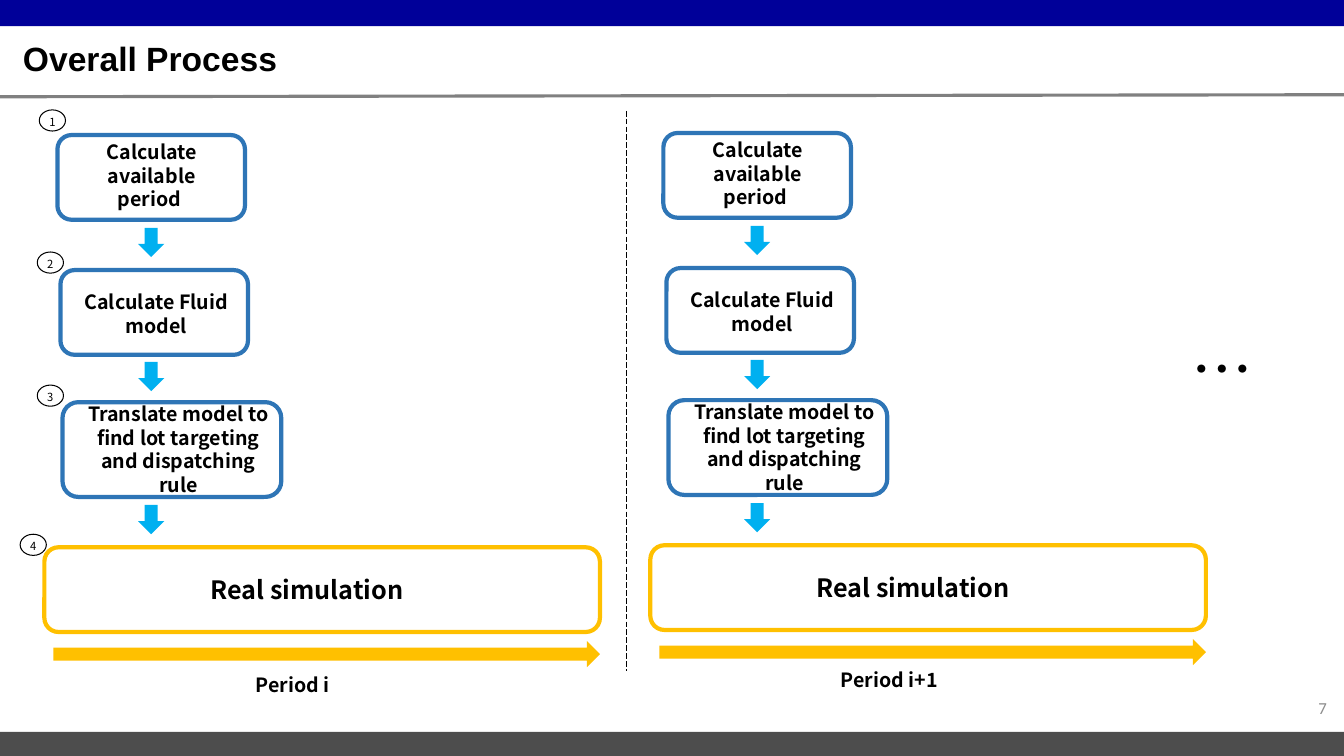
"""Build the Overall Process slide: two simulation periods side by side."""
from typing import NamedTuple

from lxml.etree import SubElement
from pptx import Presentation
from pptx.dml.color import RGBColor
from pptx.enum.dml import MSO_LINE
from pptx.enum.shapes import MSO_CONNECTOR, MSO_SHAPE as Preset
from pptx.enum.text import MSO_ANCHOR as Anchor, PP_ALIGN as Align
from pptx.oxml.ns import qn
from pptx.util import Inches, Pt

BODY_FONT = "Noto Sans CJK KR"
BLACK, BLUE, SKY, GOLD = "000000", "2E75B6", "00B0F0", "FFC000"


class Box(NamedTuple):
    left: float
    top: float
    width: float
    height: float

    def shifted(self, dx: float, dy: float) -> "Box":
        return Box(self.left + dx, self.top + dy, self.width, self.height)

    def lengths(self) -> list:
        return [Inches(value) for value in self]


class Step(NamedTuple):
    label: str
    frame: Box
    label_box: Box
    color: str = BLUE
    size: float = 14
    align: Align = Align.CENTER


class Period(NamedTuple):
    label: str
    label_box: Box
    dx: float
    dy: float


class Marker(NamedTuple):
    number: str
    left: float
    top: float


STEPS = [
    Step("Calculate available period ", Box(0.57, 1.34, 1.86, 0.84), Box(0.7, 1.34, 1.61, 0.81)),
    Step("Calculate Fluid model", Box(0.6, 2.68, 1.86, 0.84), Box(0.53, 2.83, 2.04, 0.57)),
    Step("Translate model to find lot targeting and dispatching rule",
         Box(0.62, 3.99, 2.17, 0.94), Box(0.75, 3.94, 2.04, 1.04)),
    Step("Real simulation", Box(0.44, 5.43, 5.51, 0.84), Box(1.99, 5.65, 3.38, 0.4),
         GOLD, 18, Align.LEFT),
]
STEP_ARROWS = [Box(1.37, top, 0.26, 0.29) for top in (2.26, 3.59, 5.01)]
TIME_ARROW = Box(0.53, 6.36, 5.42, 0.26)
PERIODS = [
    Period("Period i", Box(2.44, 6.63, 2.04, 0.34), 0, 0),
    Period("Period i+1", Box(8.24, 6.58, 2.04, 0.34), 6.01, -0.02),
]
MARKERS = [Marker("1", 0.39, 1.09), Marker("2", 0.37, 2.5),
           Marker("3", 0.37, 3.82), Marker("4", 0.2, 5.3)]


def rgb(color: str) -> RGBColor:
    """Turn a hex string into a colour."""
    return RGBColor.from_string(color)


def add_filled(slide, preset: Preset, box: Box, color: str) -> None:
    """Draw a solid shape without an outline."""
    shape = slide.shapes.add_shape(preset, *box.lengths())
    shape.shadow.inherit = False
    shape.fill.solid()
    shape.fill.fore_color.rgb = rgb(color)
    shape.line.fill.background()


def add_outline(slide, preset: Preset, box: Box, color: str, weight: float) -> None:
    """Draw an unfilled shape with an outline."""
    shape = slide.shapes.add_shape(preset, *box.lengths())
    shape.shadow.inherit = False
    shape.fill.background()
    shape.line.color.rgb = rgb(color)
    shape.line.width = Pt(weight)


def add_label(slide, text: str, box: Box, size: float, bold: bool = False,
              align: Align = Align.LEFT, font: str = BODY_FONT, color: str = BLACK,
              anchor: Anchor = Anchor.TOP, spacing: float = 1.0) -> None:
    """Write one wrapped paragraph of text."""
    frame = slide.shapes.add_textbox(*box.lengths()).text_frame
    frame.word_wrap = True
    frame.vertical_anchor = anchor
    frame.text = text
    paragraph = frame.paragraphs[0]
    paragraph.alignment = align
    paragraph.line_spacing = spacing
    run_font = paragraph.runs[0].font
    run_font.name, run_font.size, run_font.bold = font, Pt(size), bold
    run_font.color.rgb = rgb(color)
    SubElement(paragraph.runs[0]._r.get_or_add_rPr(), qn("a:ea"), typeface=font)


def add_rule(slide, start: tuple[float, float], end: tuple[float, float],
             color: str, weight: float, dash: MSO_LINE = MSO_LINE.SOLID) -> None:
    """Draw a straight line."""
    ends = [Inches(value) for value in (*start, *end)]
    rule = slide.shapes.add_connector(MSO_CONNECTOR.STRAIGHT, *ends)
    rule.line.color.rgb = rgb(color)
    rule.line.width = Pt(weight)
    rule.line.dash_style = dash
    SubElement(rule._element.spPr, qn("a:effectLst"))


def add_period(slide, period: Period) -> None:
    """Draw the steps, arrows and label of one period."""
    shift = period.dx, period.dy
    for step in STEPS:
        add_outline(slide, Preset.ROUNDED_RECTANGLE, step.frame.shifted(*shift), step.color, 3)
        add_label(slide, step.label, step.label_box.shifted(*shift), step.size, True, step.align)
    for arrow in STEP_ARROWS:
        add_filled(slide, Preset.DOWN_ARROW, arrow.shifted(*shift), SKY)
    add_filled(slide, Preset.RIGHT_ARROW, TIME_ARROW.shifted(*shift), GOLD)
    add_label(slide, period.label, period.label_box, 14, True)


def main() -> None:
    """Build and save the slide."""
    deck = Presentation()
    deck.slide_width, deck.slide_height = Inches(13.33), Inches(7.5)
    slide = deck.slides.add_slide(deck.slide_layouts[6])

    add_filled(slide, Preset.RECTANGLE, Box(0, 0, 13.33, 0.26), "000099")
    add_filled(slide, Preset.RECTANGLE, Box(0, 7.26, 13.33, 0.24), "4D4D4D")
    add_rule(slide, (0, 0.96), (13.33, 0.94), "808080", 2.25)
    add_label(slide, "Overall Process", Box(0.13, 0.39, 12.47, 0.43), 24, True,
              font="Arial", anchor=Anchor.MIDDLE, spacing=0.9)
    add_label(slide, "7", Box(10.26, 6.82, 3, 0.4), 12, align=Align.RIGHT,
              font="Calibri", color="8C8C8C", anchor=Anchor.MIDDLE)

    for period in PERIODS:
        add_period(slide, period)
    add_rule(slide, (6.21, 1.1), (6.21, 6.66), BLACK, 0.5, MSO_LINE.LONG_DASH)
    add_label(slide, "…", Box(11.72, 3.23, 1.17, 0.84), 44)

    for number, left, top in MARKERS:
        add_outline(slide, Preset.OVAL, Box(left, top, 0.26, 0.21), BLACK, 0.75)
        add_label(slide, number, Box(left, top, 0.32, 0.24), 8)

    deck.save("out.pptx")


if __name__ == "__main__":
    main()
